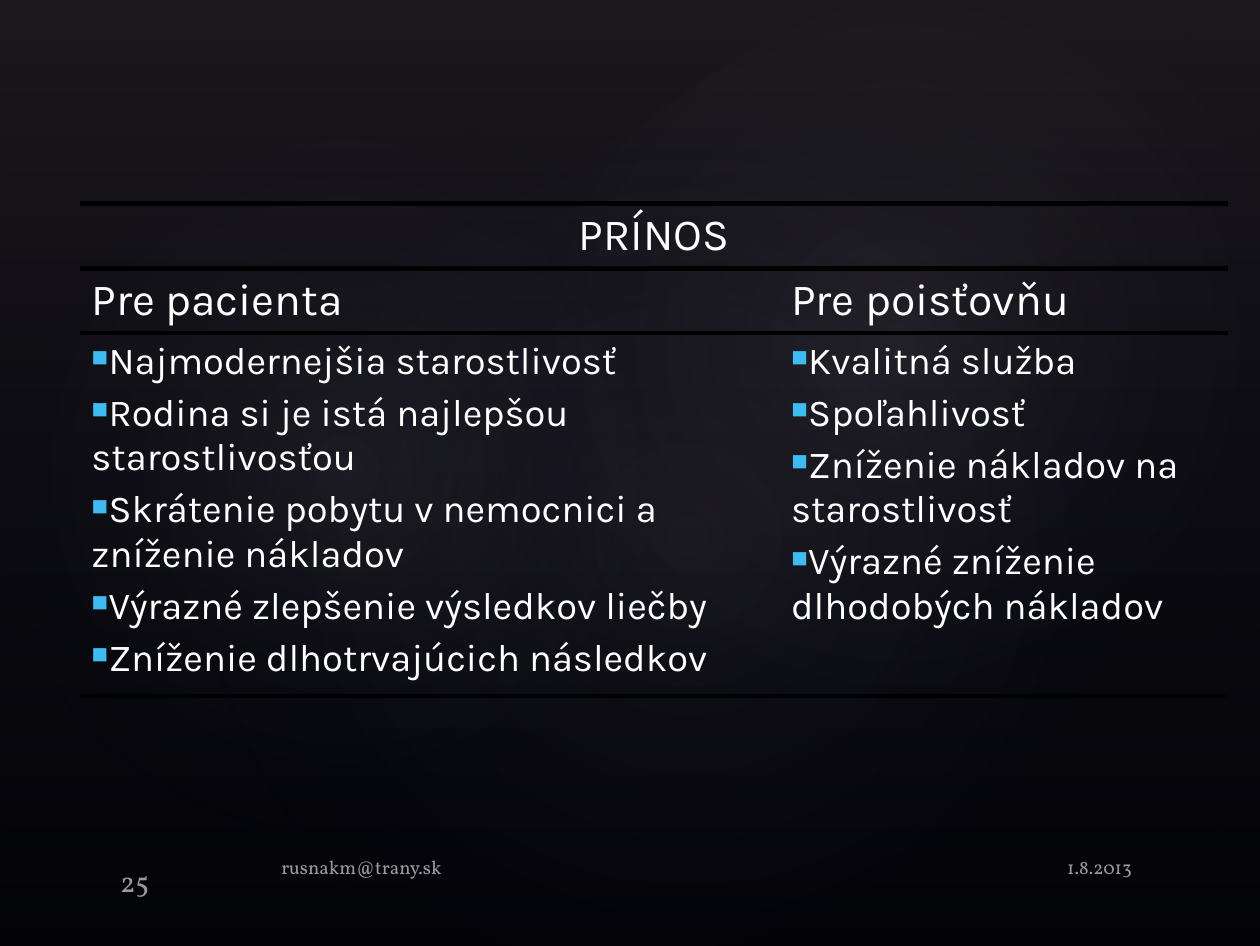
"""Build the benefits slide: a two-column table over a dark glowing background."""
from dataclasses import dataclass

from lxml import etree
from pptx import Presentation
from pptx.dml.color import RGBColor
from pptx.enum.shapes import MSO_SHAPE as Preset
from pptx.enum.text import MSO_ANCHOR as Anchor, PP_ALIGN as Align
from pptx.oxml import parse_xml
from pptx.oxml.ns import qn
from pptx.util import Inches, Pt

HEADING = "PRÍNOS"
BENEFITS = {
    "Pre pacienta": [
        "Najmodernejšia starostlivosť",
        "Rodina si je istá najlepšou starostlivosťou",
        "Skrátenie pobytu v nemocnici a zníženie nákladov",
        "Výrazné zlepšenie výsledkov liečby",
        "Zníženie dlhotrvajúcich následkov",
    ],
    "Pre poisťovňu": [
        "Kvalitná služba",
        "Spoľahlivosť",
        "Zníženie nákladov na starostlivosť",
        "Výrazné zníženie dlhodobých nákladov",
    ],
}


@dataclass(frozen=True)
class Theme:
    """Colours, fonts and type sizes."""
    ground: str = "000000"
    text: str = "FFFFFF"
    bullet: str = "3EBBF0"
    rule: str = "000000"
    haze: str = "504652"
    glow: str = "C4BCC6"
    depth: str = "242852"
    body_font: str = "Karla"
    footer_font: str = "Vollkorn"
    head_size: int = 28
    item_size: int = 24
    number_size: int = 18
    footer_size: int = 12
    rule_width: int = 3
    footer_alpha: int = 60
    bullet_scale: int = 60
    space_share: float = 0.2


THEME = Theme()
WIDTH, HEIGHT = 11.02, 8.27
GLOWS = [
    ((1.65, 1.25, 8.73, 6.88), 328.7, 7),
    ((-0.33, 1.41, 6.68, 5.4), 294.3, 8),
    ((3.95, 0.14, 7.81, 5.73), 328.7, 8),
]
FOOTER_TOP, FOOTER_HEIGHT = 7.42, 0.44
FOOTERS = [
    ("1.8.2013", 8.74, 1.27, THEME.footer_size, Align.RIGHT, Anchor.TOP, 0.06),
    ("25", 0.94, 0.9, THEME.number_size, Align.LEFT, Anchor.BOTTOM, 0.01),
    ("rusnakm@trany.sk", 2.35, 5.99, THEME.footer_size, Align.LEFT, Anchor.TOP, 0.06),
]
TABLE_LEFT, TABLE_TOP = 0.7, 1.78
COLUMNS, ROWS = (6.12, 3.92), (0.55, 0.55, 3.12)
PLAIN_TABLE = "{2D5ABB26-0587-4C30-8999-92F81FD0307C}"
DRAWING_NS = "http://schemas.openxmlformats.org/drawingml/2006/main"


def add_part(parent, tag, **attributes):
    part = etree.SubElement(parent, qn(tag))
    for key, value in attributes.items():
        part.set(key, str(value))
    return part


def add_haze(slide, preset, box, stops, radial=False, rotation=0):
    haze = slide.shapes.add_shape(preset, *map(Inches, box))
    haze.rotation = rotation
    haze.shadow.inherit = False
    haze.line.fill.background()
    gradient = parse_xml(f'<a:gradFill xmlns:a="{DRAWING_NS}" rotWithShape="1"/>')
    stop_list = add_part(gradient, "a:gsLst")
    for place, color, alpha in stops:
        stop = add_part(stop_list, "a:gs", pos=place * 1000)
        tint = add_part(stop, "a:srgbClr", val=color)
        add_part(tint, "a:alpha", val=alpha * 1000)
    if radial:
        focus = add_part(gradient, "a:path", path="circle")
        add_part(focus, "a:fillToRect", l=50000, t=50000, r=50000, b=50000)
    else:
        add_part(gradient, "a:lin", ang=90 * 60000, scaled=0)
    haze.fill.background()
    blank = haze._element.spPr.find(qn("a:noFill"))
    blank.getparent().replace(blank, gradient)


def format_paragraph(paragraph, size, font, align=Align.LEFT):
    paragraph.alignment = align
    for run in paragraph.runs:
        run.font.size = Pt(size)
        run.font.name = font
        run.font.color.rgb = RGBColor.from_string(THEME.text)


def add_footer(slide, text, left, width, size, align, anchor, bottom):
    box = slide.shapes.add_textbox(*map(Inches, (left, FOOTER_TOP, width, FOOTER_HEIGHT)))
    frame = box.text_frame
    frame.word_wrap = True
    frame.vertical_anchor = anchor
    frame.margin_left = frame.margin_right = Inches(0.11)
    frame.margin_top, frame.margin_bottom = Inches(0.06), Inches(bottom)
    frame.text = text
    format_paragraph(frame.paragraphs[0], size, THEME.footer_font, align)
    for tint in box._element.iter(qn("a:srgbClr")):
        add_part(tint, "a:alpha", val=THEME.footer_alpha * 1000)


def add_bullet(paragraph):
    props = paragraph._p.get_or_add_pPr()
    props.set("marL", "0")
    props.set("indent", "0")
    add_part(add_part(props, "a:buClr"), "a:srgbClr", val=THEME.bullet)
    add_part(props, "a:buSzPct", val=THEME.bullet_scale * 1000)
    add_part(props, "a:buChar", char="■")


def fill_cell(cell, lines, size, align=Align.LEFT, bulleted=False):
    cell.text_frame.text = "\n".join(lines)
    for paragraph in cell.text_frame.paragraphs:
        format_paragraph(paragraph, size, THEME.body_font, align)
        paragraph.space_before = Pt(size * THEME.space_share)
        if bulleted:
            add_bullet(paragraph)


def rule_cell(cell):
    props = cell._tc.get_or_add_tcPr()
    for side in ("a:lnT", "a:lnB"):
        line = add_part(props, side, w=Pt(THEME.rule_width))
        add_part(add_part(line, "a:solidFill"), "a:srgbClr", val=THEME.rule)
    cell.fill.background()


def add_benefits(slide):
    box = (TABLE_LEFT, TABLE_TOP, sum(COLUMNS), sum(ROWS))
    frame = slide.shapes.add_table(len(ROWS), len(COLUMNS), *map(Inches, box))
    table = frame.table
    table.first_row = table.horz_banding = False
    table._tbl.tblPr.find(qn("a:tableStyleId")).text = PLAIN_TABLE
    for column, width in zip(table.columns, COLUMNS):
        column.width = Inches(width)
    for row, height in zip(table.rows, ROWS):
        row.height = Inches(height)
    table.cell(0, 0).merge(table.cell(0, len(COLUMNS) - 1))
    fill_cell(table.cell(0, 0), [HEADING], THEME.head_size, Align.CENTER)
    for index, (audience, items) in enumerate(BENEFITS.items()):
        fill_cell(table.cell(1, index), [audience], THEME.head_size)
        fill_cell(table.cell(2, index), items, THEME.item_size, bulleted=True)
    for cell in table.iter_cells():
        rule_cell(cell)


def main():
    deck = Presentation()
    deck.slide_width, deck.slide_height = Inches(WIDTH), Inches(HEIGHT)
    slide = deck.slides.add_slide(deck.slide_layouts[6])
    ground = slide.background.fill
    ground.solid()
    ground.fore_color.rgb = RGBColor.from_string(THEME.ground)
    add_haze(slide, Preset.RECTANGLE, (0, 0, WIDTH, HEIGHT),
             [(0, THEME.haze, 36), (100, THEME.depth, 10)])
    for box, rotation, alpha in GLOWS:
        add_haze(slide, Preset.OVAL, box,
                 [(0, THEME.glow, alpha), (58, THEME.depth, 0)], True, rotation)
    for footer in FOOTERS:
        add_footer(slide, *footer)
    add_benefits(slide)
    deck.save("out.pptx")


if __name__ == "__main__":
    main()
